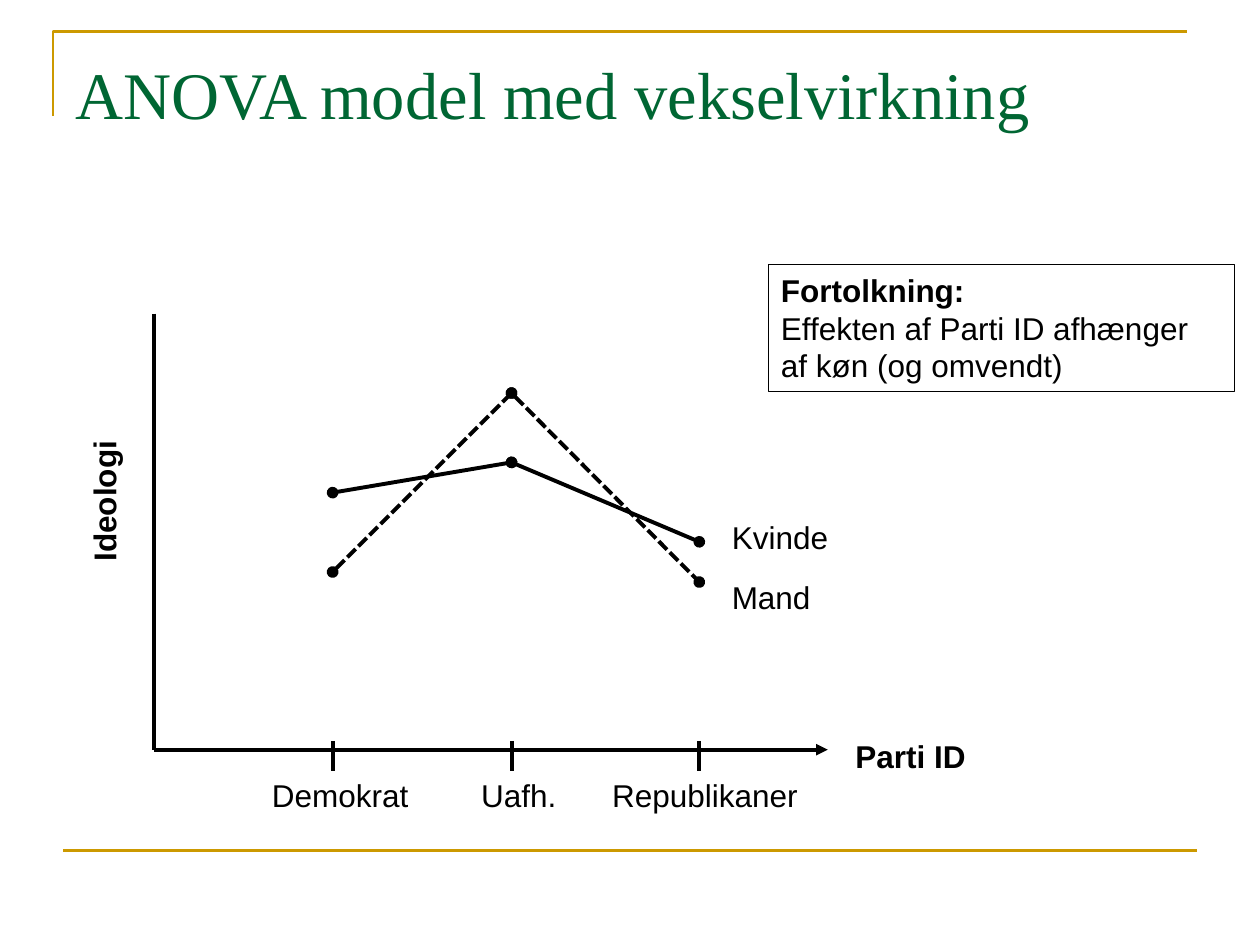
from lxml.etree import SubElement
from pptx import Presentation
from pptx.dml.color import RGBColor
from pptx.enum.dml import MSO_LINE
from pptx.enum.shapes import MSO_CONNECTOR
from pptx.enum.text import MSO_ANCHOR, MSO_AUTO_SIZE, PP_ALIGN
from pptx.oxml.ns import qn
from pptx.util import Pt

PX = 9144  # 100 px to the inch
GOLD = RGBColor(0xCC, 0x99, 0x00)
GREEN = RGBColor(0x00, 0x66, 0x33)
BLACK = RGBColor(0, 0, 0)
WHITE = RGBColor(0xFF, 0xFF, 0xFF)

TITLE = {"size": Pt(38), "name": "Times New Roman", "bold": False}
LABEL = {"size": Pt(18), "name": "Arial", "bold": False}
STRONG = {**LABEL, "bold": True}

GROUPS = [("Demokrat", 142, 84, 130), ("Uafh.", 284, 250, 81),
          ("Republikaner", 433, 354, 169)]  # name, tick, label left, width
SERIES = [("Kvinde", (142, 118, 181), None, 157, 97),
          ("Mand", (205, 63, 213), MSO_LINE.SQUARE_DOT, 205, 83)]


def emu(*vals):
    return [val * PX for val in vals]


def style(run, look, color):
    for key, val in look.items():
        setattr(run.font, key, val)
    run.font.color.rgb = color


def rule(slide, start, end, color=BLACK, width=2.25, dash=None, head=None, tail=None):
    line = slide.shapes.add_connector(MSO_CONNECTOR.STRAIGHT, *emu(*start, *end))
    line.line.color.rgb = color
    line.line.width = Pt(width)
    if dash:
        line.line.dash_style = dash
    props = line.line._get_or_add_ln()
    for tag, kind in (("a:headEnd", head), ("a:tailEnd", tail)):
        if kind:
            SubElement(props, qn(tag), type=kind)
    SubElement(line._element.spPr, qn("a:effectLst"))


def label(slide, box, parts, fill=None, wrap=False):
    """Add a text box with one paragraph for each (text, look) pair."""
    shape = slide.shapes.add_textbox(*emu(*box))
    if fill is not None:
        shape.fill.solid()
        shape.fill.fore_color.rgb = fill
    frame = shape.text_frame
    frame.word_wrap = wrap
    frame.auto_size = MSO_AUTO_SIZE.SHAPE_TO_FIT_TEXT
    for num, (text, look) in enumerate(parts):
        para = frame.add_paragraph() if num else frame.paragraphs[0]
        run = para.add_run()
        run.text = text
        style(run, look, BLACK)
    return shape


def border(slide, box):
    left, top, width, height = box
    path = slide.shapes.build_freeform(*emu(left, top + 67), scale=1.0)
    path.add_line_segments([emu(left, top), emu(left + width, top)], close=False)
    shape = path.convert_to_shape()
    shape.shadow.inherit = False
    shape.fill.background()
    shape.line.color.rgb = GOLD
    shape.line.width = Pt(1.5)
    base = top + height
    rule(slide, (left + 8, base), (left + 8 + width, base), GOLD, 1.5)


def heading(slide, box, text):
    title = slide.shapes.title
    title.left, title.top, title.width, title.height = emu(*box)
    frame = title.text_frame
    frame.auto_size = MSO_AUTO_SIZE.NONE
    frame.vertical_anchor = MSO_ANCHOR.TOP
    frame.margin_top = 12 * PX
    para = frame.paragraphs[0]
    para.alignment = PP_ALIGN.LEFT
    run = para.add_run()
    run.text = text
    style(run, TITLE, GREEN)


def axes(slide, box):
    left, top, width, height = box
    base = top + height
    rule(slide, (left, top), (left, base))
    rule(slide, (left, base), (left + width, base), tail="triangle")
    for name, tick, start, wide in GROUPS:
        rule(slide, (left + tick, base - 7), (left + tick, base + 17))
        label(slide, (left + start, base + 16, wide, 40), [(name, LABEL)])
    label(slide, (left + width + 12, base - 15, 109, 40),
          [("Parti ID", STRONG)], WHITE)
    side = label(slide, (left - 98, top + 128, 117, 40),
                 [("Ideologi", STRONG)], WHITE)
    side.rotation = 270


def curves(slide, box):
    left, top = box[:2]
    for name, means, dash, drop, wide in SERIES:
        dots = [(left + group[1], top + mean) for group, mean in zip(GROUPS, means)]
        for start, end in zip(dots, dots[1:]):
            rule(slide, start, end, dash=dash, head="oval", tail="oval")
        label(slide, (left + 449, top + drop, wide, 40), [(name, LABEL)], WHITE)


def note(slide, box):
    shape = label(slide, box, [
        ("Fortolkning:", STRONG),
        ("Effekten af Parti ID afhænger af køn (og omvendt)", LABEL),
    ], wrap=True)
    shape.line.color.rgb = BLACK
    shape.line.width = Pt(0.75)


def main():
    deck = Presentation()
    deck.slide_width, deck.slide_height = emu(1000, 750)
    slide = deck.slides.add_slide(deck.slide_layouts[5])
    plot = (122, 249, 535, 346)
    border(slide, (42, 25, 900, 650))
    heading(slide, (50, 30, 900, 125), "ANOVA model med vekselvirkning")
    axes(slide, plot)
    curves(slide, plot)
    note(slide, (610, 210, 370, 101))
    deck.save("out.pptx")


if __name__ == "__main__":
    main()
